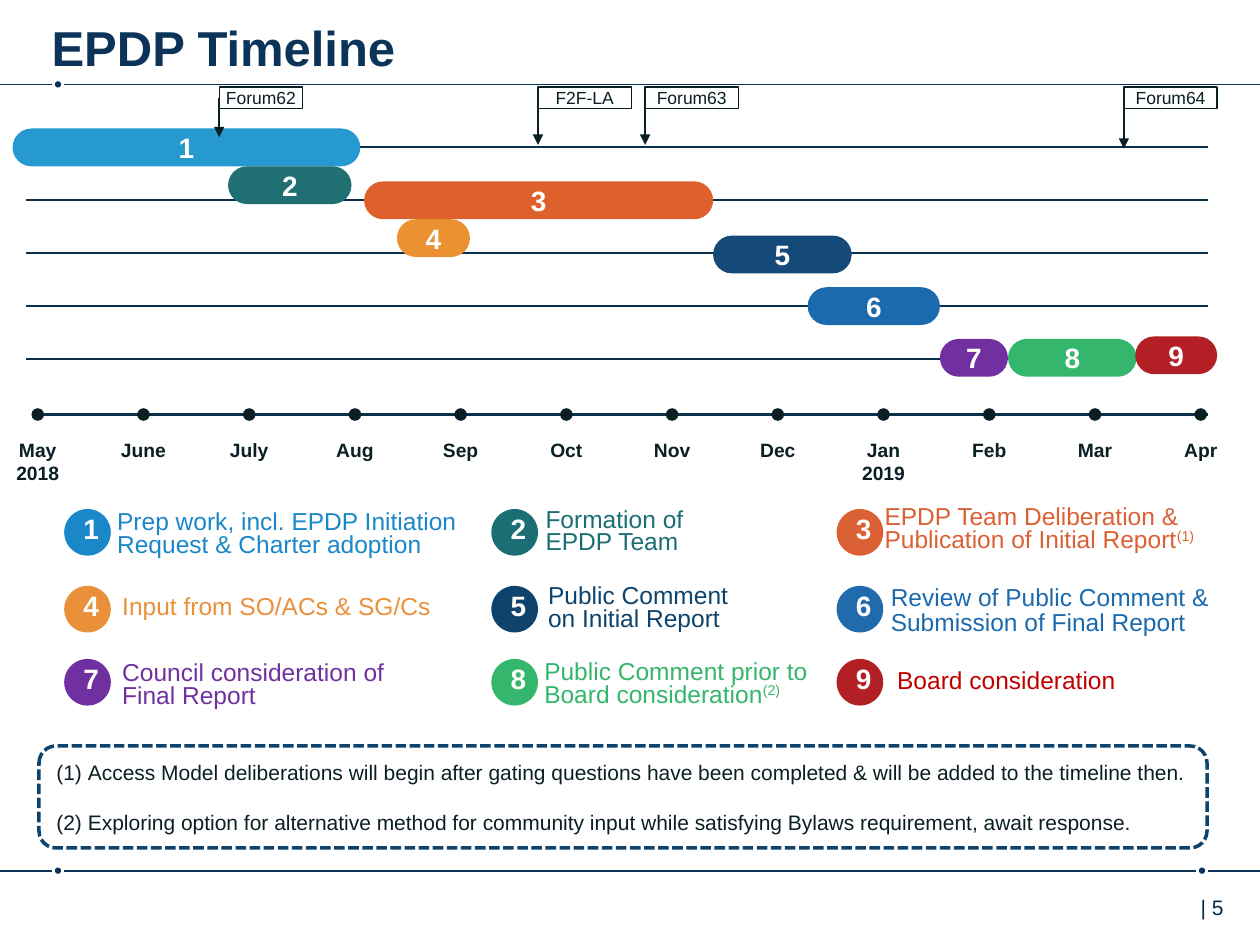
from dataclasses import dataclass

from lxml.etree import SubElement
from pptx import Presentation
from pptx.dml.color import RGBColor
from pptx.enum.dml import MSO_LINE_DASH_STYLE as Dash
from pptx.enum.shapes import MSO_CONNECTOR as Connector, MSO_SHAPE as Shape
from pptx.enum.text import MSO_ANCHOR as Anchor, MSO_AUTO_SIZE as AutoSize, PP_ALIGN as Align
from pptx.oxml.ns import qn
from pptx.util import Inches, Pt


@dataclass(frozen=True)
class Theme:
    """Colours and type sizes of the deck."""
    font: str = "Arial"
    navy: str = "0C3458"
    grid: str = "0A304B"
    ink: str = "0A1F24"
    footer: str = "002B49"
    border: str = "0D436C"
    white: str = "FFFFFF"
    bars: tuple = ("2599D0", "1F6F73", "DE602D", "EB9132", "154A78",
                   "1C6AAE", "7030A0", "34B66D", "B21F24")
    badges: tuple = ("1A87C9", "1B6F74", "DB6033", "EA903A", "0D436C",
                     "206BAC", "7030A0", "34B66D", "B21F24")
    captions: tuple = ("1A87C9", "1B6F74", "DB6033", "EA903A", "0D436C",
                       "1C6AAE", "7030A0", "34B66D", "C00000")
    title_size: int = 28
    number_size: int = 16
    caption_size: int = 14
    note_size: int = 12
    month_size: int = 11
    milestone_size: int = 10


@dataclass(frozen=True)
class Box:
    """A region of the page, in inches."""
    left: float
    top: float
    width: float
    height: float

    def inner(self, left, top, width, height):
        """Return a box placed relative to this one."""
        return Box(self.left + left, self.top + top, width, height)

    def lengths(self):
        """Return left, top, width and height as lengths."""
        return tuple(map(Inches, (self.left, self.top, self.width, self.height)))


THEME = Theme()

BARS = [(0.1, 0, 2.76), (1.81, 0.3, 0.98), (2.89, 0.42, 2.77),
        (3.15, 0.72, 0.58), (5.66, 0.85, 1.1), (6.41, 1.26, 1.05),
        (7.46, 1.67, 0.54), (8, 1.67, 1.02), (9.01, 1.65, 0.65)]

MONTHS = ["May\n2018", "June", "July", "Aug", "Sep", "Oct", "Nov", "Dec",
          "Jan\n2019", "Feb", "Mar", "Apr"]

MILESTONES = [("Forum62", 1.74, 0.66, 1.09), ("F2F-LA", 4.27, 0.74, 1.15),
              ("Forum63", 5.12, 0.74, 1.15), ("Forum64", 8.92, 0.74, 1.18)]

LEGEND = [("Prep work, incl. EPDP Initiation Request & Charter adoption", "", 0.93, 4.07, 2.76, 13),
          ("Formation of EPDP Team", "", 4.33, 4.05, 1.26, 13),
          ("EPDP Team Deliberation & Publication of Initial Report", "(1)", 7.02, 4.03, 2.78, 13),
          ("Input from SO/ACs & SG/Cs", "", 0.97, 4.74, 2.72, 13),
          ("Public Comment on Initial Report", "", 4.35, 4.66, 1.54, 13),
          ("Review of Public Comment & Submission of Final Report", "", 7.07, 4.66, 2.7, 14),
          ("Council consideration of Final Report", "", 0.97, 5.27, 2.47, 13),
          ("Public Comment prior to Board consideration", "(2)", 4.32, 5.26, 2.23, 13),
          ("Board consideration", "", 7.12, 5.33, 1.79, 13)]

NOTES = ("Access Model deliberations will begin after gating questions have been completed "
         "& will be added to the timeline then.\n"
         "Exploring option for alternative method for community input while satisfying "
         "Bylaws requirement, await response.")


def write(frame, text, *, size, color, bold=False, align=Align.LEFT, anchor=Anchor.TOP,
          margins=None, leading=None, gap=0, numbered=False, superscript=""):
    """Fill a text frame with one formatted paragraph per line of text."""
    frame.word_wrap = True
    frame.auto_size = AutoSize.NONE
    frame.vertical_anchor = anchor
    if margins is not None:
        (frame.margin_left, frame.margin_top,
         frame.margin_right, frame.margin_bottom) = map(Inches, margins)
    for index, line in enumerate(text.split("\n")):
        para = frame.paragraphs[0] if index == 0 else frame.add_paragraph()
        para.alignment = align
        if leading:
            para.line_spacing = Pt(leading)
        if index and gap:
            para.space_before = Pt(gap)
        if numbered:
            props = para._p.get_or_add_pPr()
            props.set("marL", str(Inches(0.25)))
            props.set("indent", str(Inches(-0.25)))
            SubElement(props, qn("a:buFont"), typeface=THEME.font)
            SubElement(props, qn("a:buAutoNum"), type="arabicParenBoth")
        for words in filter(None, (line, superscript)):
            span = para.add_run()
            span.text = words
            span.font.name = THEME.font
            span.font.size = Pt(size)
            span.font.bold = bold
            span.font.color.rgb = RGBColor.from_string(color)
            if words == superscript:
                span._r.get_or_add_rPr().set("baseline", "30000")


def add_figure(page, kind, box, fill=None, line=None, weight=1):
    """Add a flat preset shape with optional fill and outline."""
    figure = page.shapes.add_shape(kind, *box.lengths())
    figure.shadow.inherit = False
    if fill:
        figure.fill.solid()
        figure.fill.fore_color.rgb = RGBColor.from_string(fill)
    else:
        figure.fill.background()
    if line:
        figure.line.color.rgb = RGBColor.from_string(line)
        figure.line.width = Pt(weight)
    else:
        figure.line.fill.background()
    return figure


def add_rule(page, start, end, color, weight, arrow=False):
    """Add a straight flat line, with an arrowhead at its end if asked."""
    rule = page.shapes.add_connector(Connector.STRAIGHT, *map(Inches, (*start, *end)))
    rule.line.color.rgb = RGBColor.from_string(color)
    rule.line.width = Pt(weight)
    if arrow:
        SubElement(rule.line._get_or_add_ln(), qn("a:tailEnd"), type="triangle")
    SubElement(rule._element.spPr, qn("a:effectLst"))
    return rule


def add_label(page, box, text, **style):
    """Add a text box with formatted text."""
    write(page.shapes.add_textbox(*box.lengths()).text_frame, text, **style)


def draw_divider(page, box, dots):
    """Draw a full-width rule broken by a dot at each given position."""
    start = 0
    for dot in dots:
        add_figure(page, Shape.OVAL, box.inner(dot - 0.025, -0.025, 0.05, 0.05), THEME.navy)
        add_rule(page, (box.left + start, box.top), (box.left + dot - 0.05, box.top), THEME.navy, 1)
        start = dot + 0.05
    add_rule(page, (box.left + start, box.top), (box.left + box.width, box.top), THEME.navy, 1)


def draw_title(page, box):
    """Place the title placeholder."""
    title = page.shapes.title
    title.left, title.top, title.width, title.height = box.lengths()
    write(title.text_frame, "EPDP Timeline", size=THEME.title_size, color=THEME.navy,
          bold=True, margins=(0, 0.09, 0, 0))


def draw_bars(page, box):
    """Draw the evenly spaced guide lines and the numbered phases over them."""
    for row in range(5):
        level = box.top + 0.15 + 0.42 * row
        add_rule(page, (box.left + 0.21, level), (box.left + 9.59, level), THEME.grid, 1.25)
    for number, ((left, top, width), color) in enumerate(zip(BARS, THEME.bars), 1):
        bar = add_figure(page, Shape.ROUNDED_RECTANGLE, box.inner(left, top, width, 0.3), color)
        bar.adjustments[0] = 0.5
        write(bar.text_frame, str(number), size=THEME.number_size, color=THEME.white,
              bold=True, align=Align.CENTER, anchor=Anchor.MIDDLE)


def draw_axis(page, box):
    """Draw the month axis with evenly spaced dots and labels."""
    add_rule(page, (box.left, box.top), (box.left + box.width, box.top), THEME.grid, 1.75)
    pitch = 9.23 / (len(MONTHS) - 1)
    for index, month in enumerate(MONTHS):
        center = 0.05 + pitch * index
        add_figure(page, Shape.OVAL, box.inner(center - 0.05, -0.05, 0.1, 0.1), THEME.ink)
        add_label(page, box.inner(center - 0.3, 0.14, 0.6, 0.47), month, size=THEME.month_size,
                  color=THEME.ink, bold=True, align=Align.CENTER, margins=(0, 0.05, 0, 0.05))


def draw_milestones(page, box):
    """Draw the meeting labels, each with an arrow down to the phases."""
    for name, left, width, tip in MILESTONES:
        flag = add_figure(page, Shape.RECTANGLE, box.inner(left, 0, width, box.height),
                          line=THEME.ink, weight=0.75)
        write(flag.text_frame, name, size=THEME.milestone_size, color=THEME.ink,
              align=Align.CENTER, margins=(0, 0, 0, 0))
        start = (box.left + left, box.top + box.height / 2)
        arrow = add_rule(page, start, (box.left + left, tip), THEME.ink, 1, arrow=True)
        arrow.begin_connect(flag, 1)


def draw_legend(page, box):
    """Draw the three-by-three key of numbered badges and captions."""
    columns, rows = (0, 3.39, 6.13), (0, 0.61, 1.19)
    for index, (text, mark, left, top, width, leading) in enumerate(LEGEND):
        row, column = divmod(index, 3)
        badge = add_figure(page, Shape.OVAL, box.inner(columns[column], rows[row], 0.37, 0.37),
                           THEME.badges[index])
        write(badge.text_frame, str(index + 1), size=THEME.number_size, color=THEME.white,
              bold=True, align=Align.CENTER, leading=13)
        add_label(page, box.inner(left - 0.51, top - 4.04, width, 0.36), text,
                  size=THEME.caption_size, color=THEME.captions[index], leading=leading,
                  margins=(0, 0, 0, 0), superscript=mark)


def draw_notes(page, box):
    """Draw the dashed panel of numbered notes."""
    panel = add_figure(page, Shape.ROUNDED_RECTANGLE, box, THEME.white, THEME.border, 2)
    panel.line.dash_style = Dash.SQUARE_DOT
    write(panel.text_frame, NOTES, size=THEME.note_size, color=THEME.ink,
          anchor=Anchor.MIDDLE, gap=14, numbered=True)


def main():
    """Build the deck and save it."""
    deck = Presentation()
    deck.slide_width, deck.slide_height = Inches(10), Inches(7.5)
    page = deck.slides.add_slide(deck.slide_layouts[5])
    draw_divider(page, Box(0, 0.67, 10, 0), (0.46,))
    draw_divider(page, Box(0, 6.91, 10, 0), (0.46, 9.54))
    draw_title(page, Box(0.41, 0.05, 8.76, 0.49))
    draw_bars(page, Box(0, 1.02, 10, 2))
    draw_axis(page, Box(0.25, 3.29, 9.34, 0.61))
    draw_milestones(page, Box(0, 0.69, 10, 0.17))
    draw_legend(page, Box(0.51, 4.04, 9.3, 1.56))
    draw_notes(page, Box(0.31, 5.92, 9.27, 0.81))
    add_label(page, Box(9.21, 7.05, 0.6, 0.4), "| 5", size=THEME.note_size,
              color=THEME.footer, align=Align.RIGHT)
    deck.save("out.pptx")


if __name__ == "__main__":
    main()
